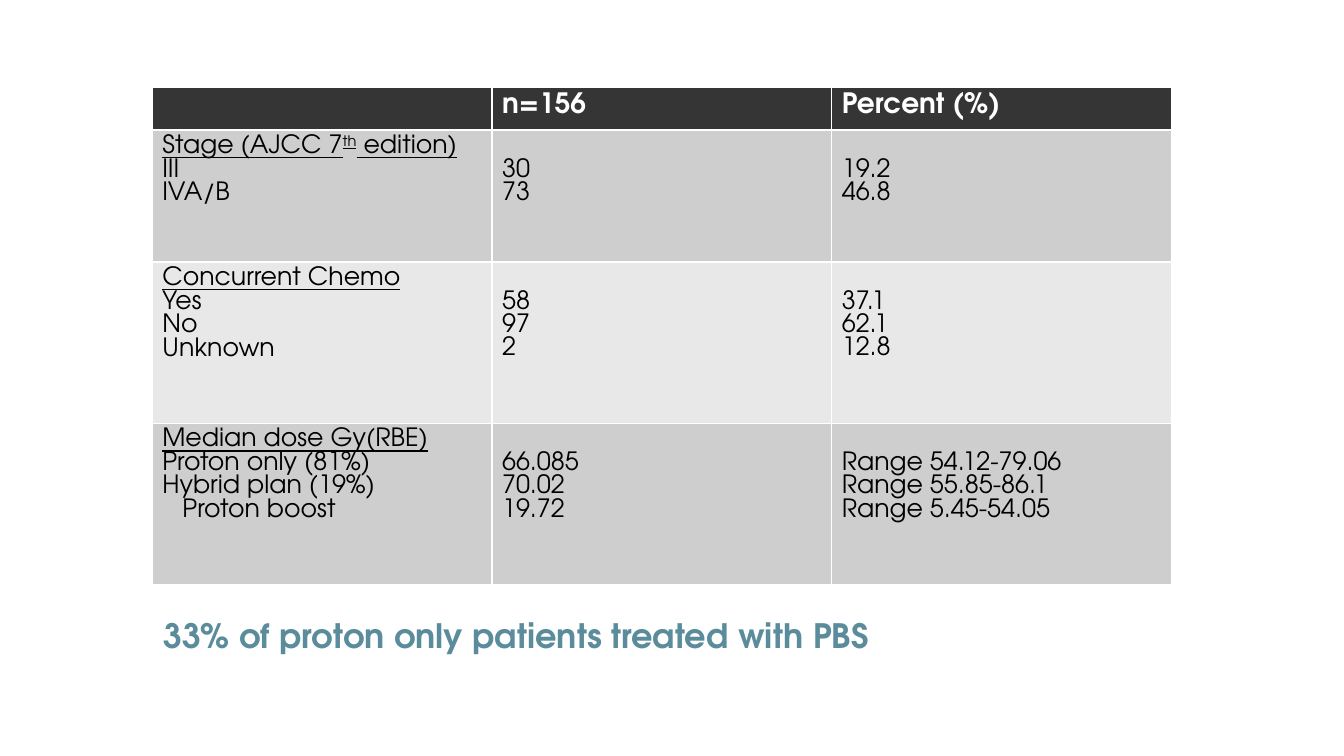
import pptx
import pptx.util
import pptx.dml.color
import pptx.enum.text
from dataclasses import dataclass

Inches = pptx.util.Inches
Pt = pptx.util.Pt
RGB = pptx.dml.color.RGBColor.from_string


@dataclass
class Theme:
    font: str = "TeX Gyre Adventor"
    dark: str = "353535"
    bands: tuple = ("CECECE", "E8E8E8")
    white: str = "FFFFFF"
    black: str = "000000"
    teal: str = "5B8C9B"
    head: int = 20
    body: int = 18
    note: int = 24
    pitch: float = 0.93  # line height as a share of the type size


theme = Theme()


def add_run(para, text, size, color, bold=False, under=False):
    run = para.add_run()
    run.text = text
    font = run.font
    font.name, font.size, font.bold = theme.font, Pt(size), bold
    font.underline = under
    font.color.rgb = RGB(color)
    return run


def fill_cell(cell, lines, size, color, bold=False):
    frame = cell.text_frame
    for i, line in enumerate(lines):
        para = frame.paragraphs[0] if i == 0 else frame.add_paragraph()
        para.line_spacing = Pt(size * theme.pitch)
        add_run(para, line, size, color, bold)


deck = pptx.Presentation()
deck.slide_width, deck.slide_height = Inches(13.33), Inches(7.5)
slide = deck.slides.add_slide(deck.slide_layouts[6])

# Content: heading parts (text, raised), labels, counts, shares
heads = ["n=156", "Percent (%)"]
groups = [
    ([("Stage (AJCC 7", False), ("th", True), (" edition)", False)],
     ["III", "IVA/B"], ["30", "73"], ["19.2", "46.8"]),
    ([("Concurrent Chemo", False)],
     ["Yes", "No", "Unknown"], ["58", "97", "2"], ["37.1", "62.1", "12.8"]),
    ([("Median dose Gy(RBE)", False)],
     ["Proton only (81%)", "Hybrid plan (19%)", "Proton boost"],
     ["66.085", "70.02", "19.72"],
     ["Range 54.12-79.06", "Range 55.85-86.1", "Range 5.45-54.05"]),
]

# Table frame
table = slide.shapes.add_table(
    4, 3, Inches(1.51), Inches(0.87), Inches(10.11), Inches(4.93)).table
for col in table.columns:
    col.width = Inches(3.37)
for row, high in zip(table.rows, [0.42, 1.31, 1.6, 1.6]):
    row.height = Inches(high)
for r, row in enumerate(table.rows):
    for cell in row.cells:
        cell.fill.solid()
        cell.fill.fore_color.rgb = RGB(theme.bands[(r - 1) % 2] if r else theme.dark)

# Header row
for c, text in enumerate(heads, 1):
    fill_cell(table.cell(0, c), [text], theme.head, theme.white, True)

# Body rows: figures start one line below the group heading
for r, (title, labels, counts, shares) in enumerate(groups, 1):
    cell = table.cell(r, 0)
    para = cell.text_frame.paragraphs[0]
    para.line_spacing = Pt(theme.body * theme.pitch)
    for text, raised in title:
        run = add_run(para, text, theme.body, theme.black, under=True)
        if raised:
            run._r.get_or_add_rPr().set("baseline", "30000")
    for label in labels:
        para = cell.text_frame.add_paragraph()
        para.line_spacing = Pt(theme.body * theme.pitch)
        if label == "Proton boost":
            para._p.get_or_add_pPr().set("marL", str(Inches(0.2)))
        add_run(para, label, theme.body, theme.black)
    for c, values in enumerate([counts, shares], 1):
        cell = table.cell(r, c)
        cell.margin_top = Inches(0.05) + Pt(theme.body * theme.pitch)
        fill_cell(cell, values, theme.body, theme.black)

# Note under the table
note = slide.shapes.add_textbox(Inches(1.52), Inches(6.05), Inches(8.18), Inches(0.5))
note.text_frame.word_wrap = True
note.text_frame.auto_size = pptx.enum.text.MSO_AUTO_SIZE.SHAPE_TO_FIT_TEXT
add_run(note.text_frame.paragraphs[0], "33% of proton only patients treated with PBS",
        theme.note, theme.teal, True)

deck.save("out.pptx")
